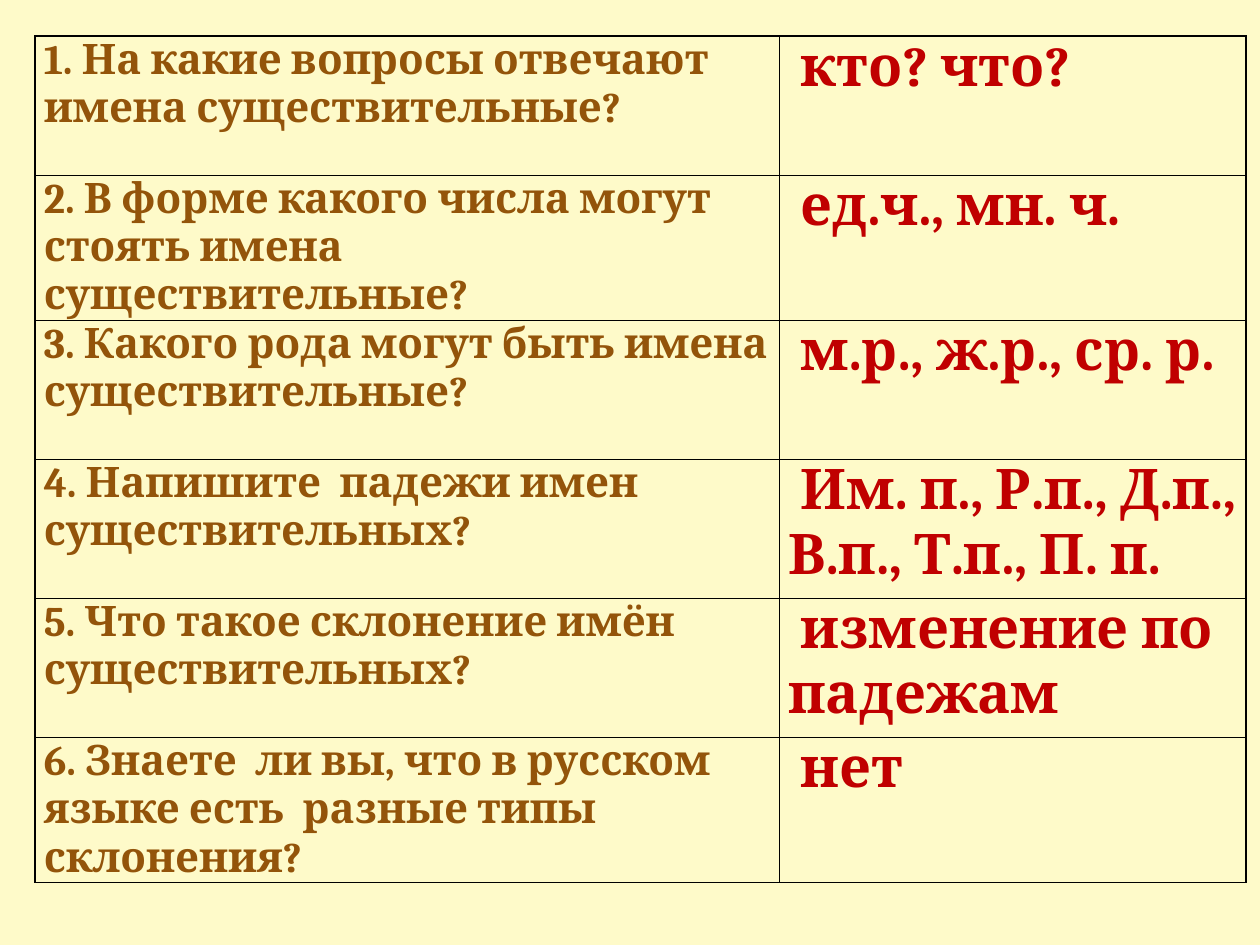
from lxml import etree
from pptx import Presentation
from pptx.dml.color import RGBColor
from pptx.oxml import ns
from pptx.util import Pt

CREAM, BROWN, RED = "FEFAC9", "93540A", "C00000"


def paint(fill, hue):
    fill.solid()
    fill.fore_color.rgb = RGBColor.from_string(hue)


def write(cell, words, size, hue):
    cell.margin_left = cell.margin_right = Pt(5)
    cell.margin_top = cell.margin_bottom = Pt(0)
    run = cell.text_frame.paragraphs[0].add_run()
    run.text = words
    font = run.font
    font.name, font.size, font.bold = "Cambria", Pt(size), True
    paint(font.fill, hue)
    props = cell._tc.get_or_add_tcPr()
    for side in ("lnL", "lnR", "lnT", "lnB"):
        line = etree.SubElement(props, ns.qn("a:" + side), w=str(Pt(1)))
        solid = etree.SubElement(line, ns.qn("a:solidFill"))
        etree.SubElement(solid, ns.qn("a:srgbClr"), val="000000")
    paint(cell.fill, CREAM)


pairs = [
    ("1. На какие вопросы отвечают имена существительные?", " кто? что?"),
    ("2. В форме какого числа могут стоять имена существительные?", " ед.ч., мн. ч."),
    ("3. Какого рода могут быть имена существительные?", " м.р., ж.р., ср. р."),
    ("4. Напишите  падежи имен существительных?", " Им. п., Р.п., Д.п., В.п., Т.п., П. п."),
    ("5. Что такое склонение имён существительных?", " изменение по падежам"),
    ("6. Знаете  ли вы, что в русском языке есть  разные типы склонения?", " нет"),
]
wides = [425.5, 266.5]
highs = [79.5, 73.5, 79.5, 79.5, 79.5, 80]

deck = Presentation()
deck.slide_width, deck.slide_height = Pt(720), Pt(540)
slide = deck.slides.add_slide(deck.slide_layouts[6])
paint(slide.background.fill, CREAM)

frame = slide.shapes.add_table(
    len(pairs), 2, Pt(20), Pt(20.7), Pt(sum(wides)), Pt(sum(highs)))
table = frame.table
table.first_row = table.horz_banding = False
for col, wide in zip(table.columns, wides):
    col.width = Pt(wide)
for row, high, (ask, reply) in zip(table.rows, highs, pairs):
    row.height = Pt(high)
    write(row.cells[0], ask, 24, BROWN)
    write(row.cells[1], reply, 32, RED)

deck.save("out.pptx")
